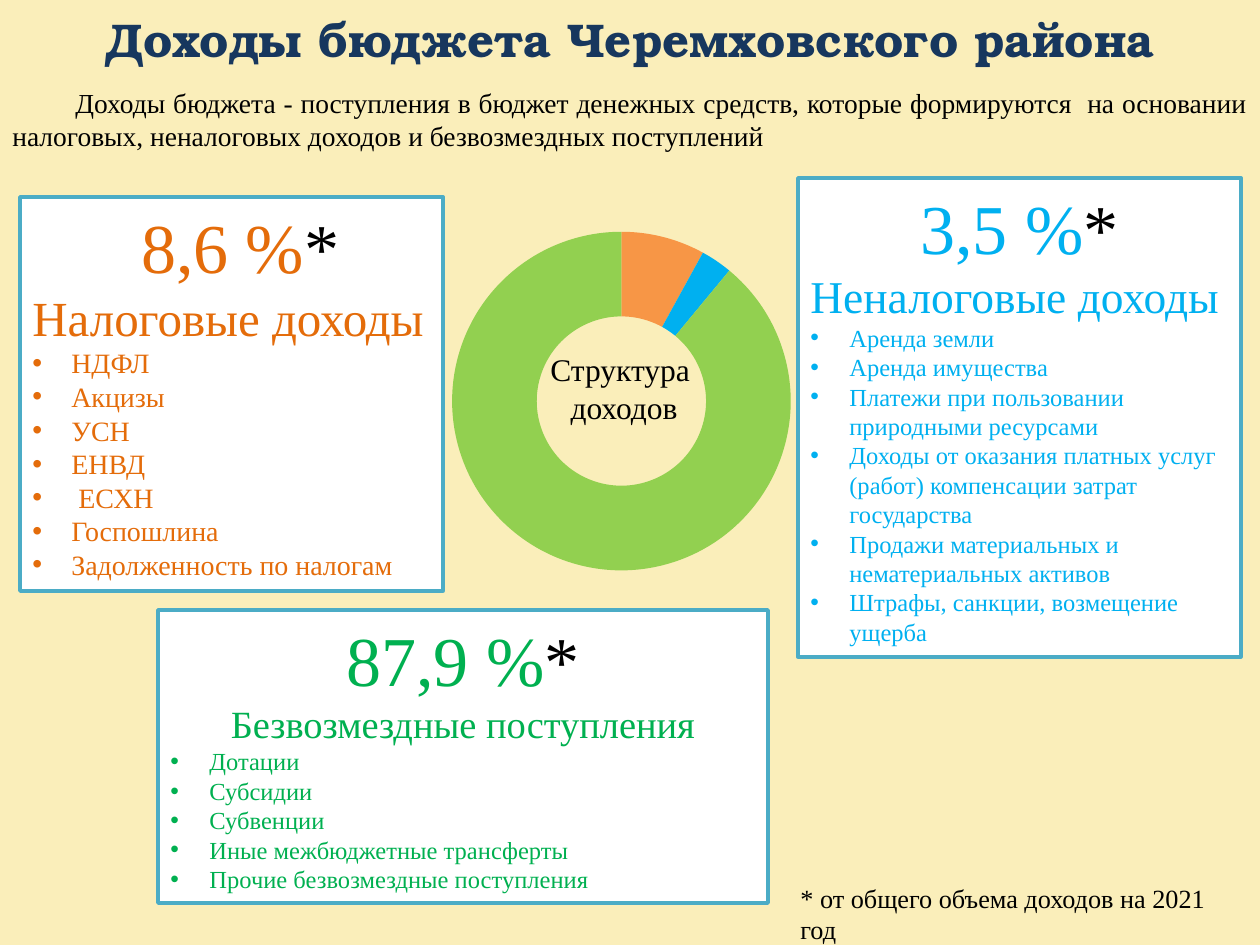
from lxml.etree import SubElement
from pptx import Presentation
from pptx.chart.data import CategoryChartData
from pptx.dml.color import RGBColor
from pptx.enum.chart import XL_CHART_TYPE as ChartType
from pptx.enum.shapes import MSO_SHAPE as ShapeKind
from pptx.enum.text import MSO_ANCHOR as Anchor, PP_ALIGN as Align
from pptx.oxml import parse_xml
from pptx.oxml.ns import nsdecls, qn
from pptx.util import Emu, Pt

SERIF = "Times New Roman"
BLACK = "000000"
INDENT = 39


def px(length):
    return Emu(round(length * 914400 / 126))


def color(value):
    return RGBColor.from_string(value)


def set_font(font, size, value, name=SERIF, bold=False):
    font.size = Pt(size)
    font.name = name
    font.bold = bold
    font.color.rgb = color(value)


def add_text(slide, box, lines, size, value=BLACK, align=Align.LEFT,
             anchor=Anchor.TOP, name=SERIF, bold=False):
    shape = slide.shapes.add_textbox(*map(px, box))
    frame = shape.text_frame
    frame.word_wrap = True
    frame.vertical_anchor = anchor
    frame.text = "\n".join(lines)
    for paragraph in frame.paragraphs:
        paragraph.alignment = align
        set_font(paragraph.font, size, value, name, bold)


def hang(paragraph, bullet=False):
    properties = paragraph._p.get_or_add_pPr()
    properties.set("marL", str(px(INDENT)))
    properties.set("indent", str(-px(INDENT)))
    if bullet:
        SubElement(properties, qn("a:buFont")).set("typeface", "Arial")
        SubElement(properties, qn("a:buChar")).set("char", "•")


def add_income_card(slide, box, share, heading, heading_size, heading_align,
                    items, item_size, value):
    shape = slide.shapes.add_shape(ShapeKind.RECTANGLE, *map(px, box))
    shape.shadow.inherit = False
    shape.fill.solid()
    shape.fill.fore_color.rgb = color("FFFFFF")
    shape.line.color.rgb = color("4BACC6")
    shape.line.width = Pt(2)
    frame = shape.text_frame
    frame.word_wrap = True
    frame.vertical_anchor = Anchor.TOP

    paragraph = frame.paragraphs[0]
    hang(paragraph)
    paragraph.alignment = Align.CENTER
    for text, run_color in ((share, value), ("*", BLACK)):
        run = paragraph.add_run()
        run.text = text
        set_font(run.font, 40, run_color)

    paragraph = frame.add_paragraph()
    hang(paragraph)
    paragraph.text = heading
    paragraph.alignment = heading_align
    set_font(paragraph.font, heading_size, value)

    for item in items:
        paragraph = frame.add_paragraph()
        hang(paragraph, bullet=True)
        paragraph.text = item
        paragraph.alignment = Align.LEFT
        set_font(paragraph.font, item_size, value)


def add_income_chart(slide, box):
    data = CategoryChartData()
    data.categories = ["1", "2", "3"]
    data.add_series("Series 1", (8, 3, 89))
    chart = slide.shapes.add_chart(ChartType.DOUGHNUT, *map(px, box), data).chart
    chart.has_legend = False
    chart.has_title = False
    set_font(chart.font, 18, BLACK, "Calibri")
    plot = chart.plots[0]
    plot.vary_by_categories = True
    for index, value in enumerate(("F79646", "00B0F0", "92D050")):
        fill = plot.series[0].points[index].format.fill
        fill.solid()
        fill.fore_color.rgb = color(value)
    plot_area = chart._chartSpace.chart.plotArea
    plot_area.find(".//" + qn("c:holeSize")).set("val", "50")
    for layout in plot_area.findall(qn("c:layout")):
        plot_area.remove(layout)
    plot_area.insert(0, parse_xml(
        f'<c:layout {nsdecls("c")}><c:manualLayout><c:layoutTarget val="inner"/>'
        '<c:xMode val="edge"/><c:yMode val="edge"/><c:x val="0.27"/><c:y val="0.06"/>'
        '<c:w val="0.55"/><c:h val="0.82"/></c:manualLayout></c:layout>'))


def main():
    presentation = Presentation()
    presentation.slide_width = px(1260)
    presentation.slide_height = px(945)
    slide = presentation.slides.add_slide(presentation.slide_layouts[6])
    slide.background.fill.solid()
    slide.background.fill.fore_color.rgb = color("FAEEBA")

    add_text(slide, (0, 0, 1260, 78), ["Доходы бюджета Черемховского района"], 27,
             "17375E", Align.CENTER, Anchor.MIDDLE, "TeX Gyre Bonum", True)
    add_text(slide, (0, 80, 1260, 78),
             ["\tДоходы бюджета - поступления в бюджет денежных средств, которые "
              "формируются  на основании налоговых, неналоговых доходов и "
              "безвозмездных поступлений"], 15.7, align=Align.JUSTIFY)
    add_text(slide, (501, 344, 246, 89), ["Структура ", "доходов"], 18,
             align=Align.CENTER)
    add_income_chart(slide, (246, 207, 689, 413))

    add_income_card(
        slide, (20, 197, 423, 394), " 8,6 %", "Налоговые доходы", 28, Align.LEFT,
        ["НДФЛ", "Акцизы", "УСН", "ЕНВД", " ЕСХН", "Госпошлина",
         "Задолженность по налогам"], 16, "E46C0A")
    add_income_card(
        slide, (798, 178, 443, 479), "3,5 %", "Неналоговые доходы", 26, Align.LEFT,
        ["Аренда земли", "Аренда имущества",
         "Платежи при пользовании природными ресурсами",
         "Доходы от оказания платных услуг (работ) компенсации затрат государства",
         "Продажи материальных и нематериальных активов",
         "Штрафы, санкции, возмещение ущерба"], 14, "00B0F0")
    add_income_card(
        slide, (158, 610, 610, 293), "87,9 %", "Безвозмездные поступления", 22,
        Align.CENTER,
        ["Дотации", "Субсидии", "Субвенции", "Иные межбюджетные трансферты",
         "Прочие безвозмездные поступления"], 14, "00B050")

    add_text(slide, (788, 876, 472, 44),
             ["* от общего объема доходов на 2021 год"], 15)
    presentation.save("out.pptx")


if __name__ == "__main__":
    main()
